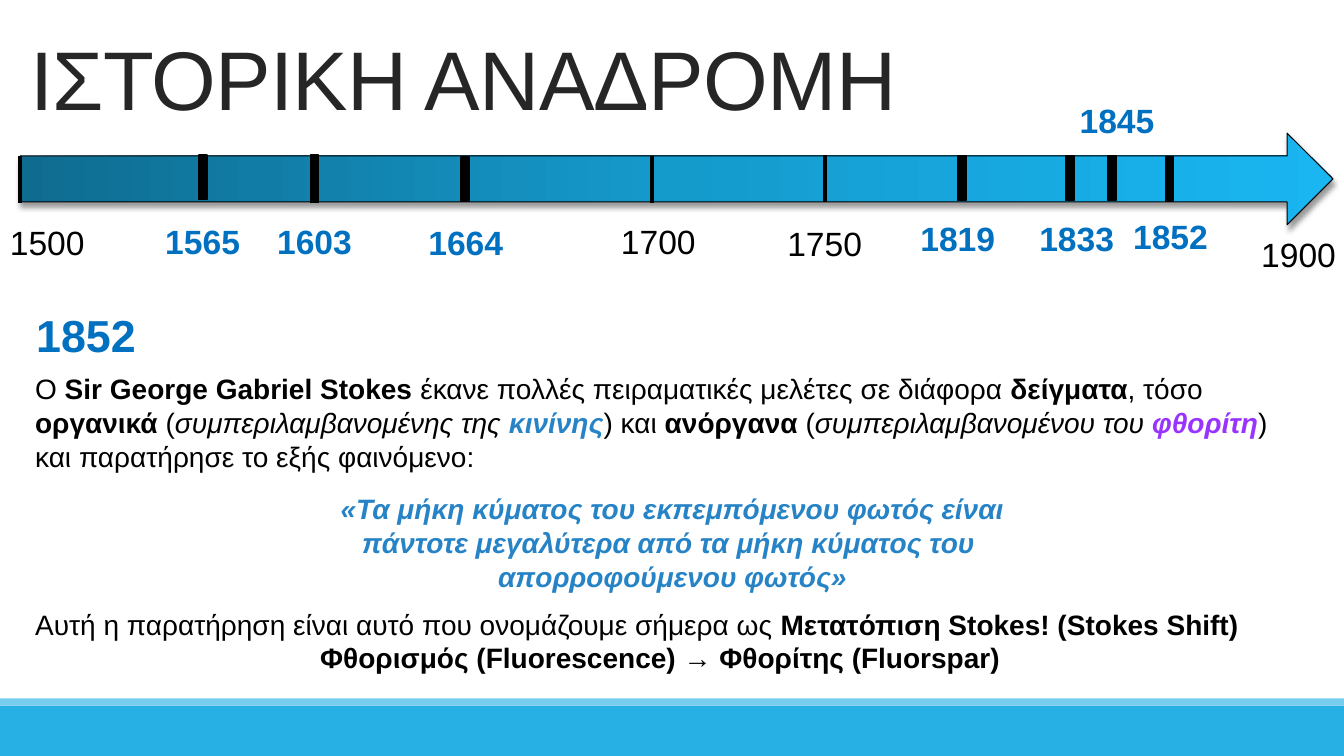
from lxml import etree
from pptx import Presentation, util as u
from pptx.dml.color import RGBColor
from pptx.enum import shapes, text
from pptx.oxml import parse_xml
from pptx.oxml.ns import nsdecls, qn

PX = 9144
FONT = "Arial"
COLORS = {
    "black": "000000", "title": "262626", "year": "0070C0", "quote": "2683C6",
    "fluorite": "9933FF", "footer": "27B0E4", "stripe": "76CDEE",
    "start": "0F6C90", "middle": "159ACC", "end": "19B6F2",
}


def px(n):
    return u.Emu(n * PX)


def rgb(name):
    return RGBColor.from_string(COLORS[name])


def add_text(s, box, paragraphs, size=20, color="black", bold=False, italic=False,
             align="LEFT", anchor="TOP", line_spacing=None, kern=None):
    tb = s.shapes.add_textbox(*map(px, box))
    tf = tb.text_frame
    tf.word_wrap = True
    tf.vertical_anchor = getattr(text.MSO_ANCHOR, anchor)
    for i, par in enumerate(paragraphs):
        par = par if isinstance(par, dict) else {"runs": [par]}
        p = tf.paragraphs[0] if i == 0 else tf.add_paragraph()
        p.alignment = getattr(text.PP_ALIGN, par.get("align", align))
        if line_spacing:
            p.line_spacing = line_spacing
        if "before" in par:
            p.space_before = u.Pt(par["before"])
        for run in par["runs"]:
            words, fmt = (run, {}) if isinstance(run, str) else run
            r = p.add_run()
            r.text = words
            f = r.font
            f.name, f.size = FONT, u.Pt(size)
            f.bold = fmt.get("bold", bold)
            f.italic = fmt.get("italic", italic)
            f.color.rgb = rgb(fmt.get("color", color))
            if kern is not None:
                r._r.get_or_add_rPr().set("spc", str(kern))
    return tb


def add_block(s, box, fill, line=None, width=1.25, shape="RECTANGLE"):
    sp = s.shapes.add_shape(getattr(shapes.MSO_SHAPE, shape), *map(px, box))
    sp.shadow.inherit = False
    sp.fill.solid()
    sp.fill.fore_color.rgb = rgb(fill)
    if line:
        sp.line.color.rgb = rgb(line)
        sp.line.width = u.Pt(width)
    else:
        sp.line.fill.background()
    return sp


def add_arrow(s, box):
    sp = add_block(s, box, "middle", "black", 0.75, "RIGHT_ARROW")
    spPr = sp._element.spPr
    stops = "".join(
        f'<a:gs pos="{pos}"><a:srgbClr val="{COLORS[name]}"/></a:gs>'
        for pos, name in ((0, "start"), (50000, "middle"), (100000, "end")))
    grad = parse_xml(f'<a:gradFill {nsdecls("a")} rotWithShape="1"><a:gsLst>{stops}</a:gsLst>'
                     '<a:lin ang="0" scaled="0"/></a:gradFill>')
    spPr.replace(spPr.find(qn("a:solidFill")), grad)
    shadow = parse_xml(f'<a:outerShdw {nsdecls("a")} blurRad="50800" dist="38100" dir="5400000" '
                       f'rotWithShape="0"><a:srgbClr val="{COLORS["black"]}">'
                       '<a:alpha val="40000"/></a:srgbClr></a:outerShdw>')
    spPr.find(qn("a:effectLst")).append(shadow)


def add_tick(s, x, y, h):
    c = s.shapes.add_connector(shapes.MSO_CONNECTOR.STRAIGHT, px(x), px(y), px(x), px(y + h))
    c.line.color.rgb = rgb("black")
    c.line.width = u.Pt(2.75)
    etree.SubElement(c._element.spPr, qn("a:effectLst"))


def footer(s, box):
    x, y, w, h = box
    add_block(s, (x, y + 7, w, h - 7), "footer")
    add_block(s, (x, y, w, 7), "stripe")


def title(s, box):
    add_text(s, box, ["ΙΣΤΟΡΙΚΗ ΑΝΑΔΡΟΜΗ"], size=59.4, color="title",
             anchor="BOTTOM", line_spacing=0.85, kern=-50)


def timeline(s, box):
    x, y, w, h = box
    add_arrow(s, box)
    for dx, dy in ((0, 23), (627, 23), (798, 22)):
        add_tick(s, x + dx, y + dy, 46)
    for dx, dy, bar_h in ((177, 22, 44), (288, 22, 47), (437, 24, 44), (930, 23, 44),
                          (1037, 23, 44), (1079, 23, 44), (1136, 24, 44)):
        add_block(s, (x + dx, y + dy, 8, bar_h), "black", "black")
    for year, dx, dy, label_w in (("1500", -20, 83, 96), ("1700", 586, 82, 98),
                                  ("1750", 751, 84, 105), ("1900", 1221, 95, 105)):
        add_text(s, (x + dx, y + dy, label_w, 50), [year], size=24)
    for year, dx, dy, label_w in (("1565", 134, 82, 111), ("1603", 245, 82, 98),
                                  ("1664", 395, 83, 98), ("1819", 883, 79, 102),
                                  ("1833", 1001, 79, 102), ("1845", 1041, -38, 104),
                                  ("1852", 1094, 77, 111)):
        add_text(s, (x + dx, y + dy, label_w, 50), [year], size=24, color="year", bold=True)


def story(s, box):
    x, y, w, h = box
    strong, slanted = {"bold": True}, {"italic": True}
    add_text(s, (x + 1, y, 684, 64), ["1852"], size=32, color="year", bold=True)
    add_text(s, (x, y + 64, w, h - 64), [
        {"runs": [
            "Ο ", ("Sir George Gabriel Stokes ", strong),
            "έκανε πολλές πειραματικές μελέτες σε διάφορα ", ("δείγματα", strong),
            ", τόσο ", ("οργανικά", strong), " (", ("συμπεριλαμβανομένης της ", slanted),
            ("κινίνης", {"bold": True, "italic": True, "color": "quote"}),
            ") και ", ("ανόργανα", strong), " (", ("συμπεριλαμβανομένου του ", slanted),
            ("φθορίτη", {"bold": True, "italic": True, "color": "fluorite"}),
            ") και παρατήρησε το εξής φαινόμενο:"]},
        {"before": 96, "runs": [
            "Αυτή η παρατήρηση είναι αυτό που ονομάζουμε σήμερα ως ",
            ("Μετατόπιση Stokes! (Stokes Shift)", strong)]},
        {"align": "CENTER", "runs": [
            ("Φθορισμός (Fluorescence) → Φθορίτης (Fluorspar)", strong)]},
    ])
    add_text(s, (x + 301, y + 183, 682, 111), [
        "«Τα μήκη κύματος του εκπεμπόμενου φωτός είναι ",
        "πάντοτε μεγαλύτερα από τα μήκη κύματος του ",
        "απορροφούμενου φωτός»",
    ], color="quote", bold=True, italic=True, align="CENTER")


def main():
    prs = Presentation()
    prs.slide_width, prs.slide_height = px(1333), px(750)
    s = prs.slides.add_slide(prs.slide_layouts[6])
    footer(s, (0, 693, 1333, 57))
    title(s, (20, 21, 908, 110))
    timeline(s, (20, 132, 1302, 91))
    story(s, (25, 300, 1260, 414))
    prs.save("out.pptx")


if __name__ == "__main__":
    main()
